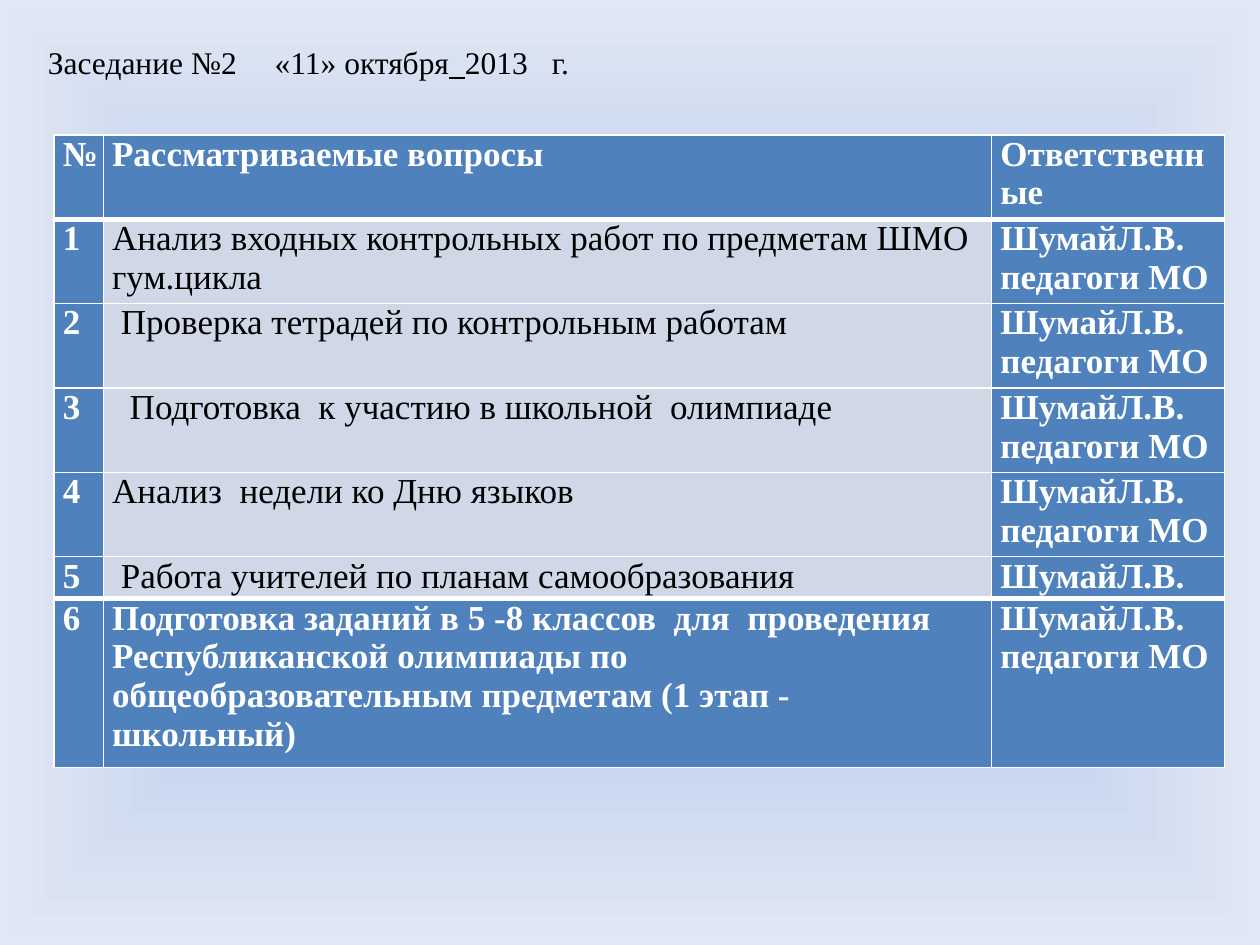
from lxml.etree import SubElement as add_element
from pptx import Presentation
from pptx.dml.color import RGBColor
from pptx.enum.text import MSO_ANCHOR as Anchor
from pptx.enum.text import MSO_AUTO_SIZE as AutoSize
from pptx.enum.text import PP_ALIGN as Align
from pptx.oxml.ns import qn
from pptx.util import Inches, Pt

FONT = "Times New Roman"
WHITE, BLACK, BLUE, PALE = "FFFFFF", "000000", "4F81BD", "D0D8E8"
BACKGROUND_STOPS = [(0, "CCC1DA"), (50, "C2D1ED"), (100, "E1E8F5")]

COLUMN_WIDTHS = [0.39, 7.05, 1.85]
ROW_HEIGHTS = [0.67] * 5 + [0.33, 1.34]
HEADERS = ["№", "Рассматриваемые вопросы", "Ответственные"]
LEADER = "ШумайЛ.В."
LEADER_AND_TEACHERS = "ШумайЛ.В.\nпедагоги МО"
# Question, first-line indent in inches, people responsible
AGENDA = [
    ("Анализ входных контрольных работ по предметам ШМО гум.цикла", 0, LEADER_AND_TEACHERS),
    ("Проверка тетрадей по контрольным работам", 0.07, LEADER_AND_TEACHERS),
    ("Подготовка  к участию в школьной  олимпиаде", 0.14, LEADER_AND_TEACHERS),
    ("Анализ  недели ко Дню языков", 0, LEADER_AND_TEACHERS),
    ("Работа учителей по планам самообразования", 0.07, LEADER),
    ("Подготовка заданий в 5 -8 классов  для  проведения Республиканской олимпиады "
     "по общеобразовательным предметам (1 этап - школьный)", 0, LEADER_AND_TEACHERS),
]


def color(value):
    return RGBColor.from_string(value)


def add_run(paragraph, text, size=20, text_color=BLACK, bold=False, underline=False):
    run = paragraph.add_run()
    run.text = text
    font = run.font
    font.name, font.size, font.bold, font.underline = FONT, Pt(size), bold, underline
    font.color.rgb = color(text_color)


def add_color(parent, value):
    add_element(parent, qn("a:srgbClr"), val=value)


def set_background(slide):
    slide.background.fill.gradient()
    gradient = slide.element.find(".//" + qn("a:gradFill"))
    gradient.clear()
    stops = add_element(gradient, qn("a:gsLst"))
    for percent, value in BACKGROUND_STOPS:
        add_color(add_element(stops, qn("a:gs"), pos=str(percent * 1000)), value)
    shape_fill = add_element(gradient, qn("a:path"), attrib={"path": "shape"})
    add_element(shape_fill, qn("a:fillToRect"), attrib={side: "50000" for side in "ltrb"})


def set_margins(item, horizontal, vertical):
    item.margin_left = item.margin_right = Inches(horizontal)
    item.margin_top = item.margin_bottom = Inches(vertical)


def add_title(slide):
    title = slide.shapes.title
    title.left, title.top = Inches(0.28), Inches(0.29)
    title.width, title.height = Inches(8.98), Inches(0.4)
    frame = title.text_frame
    frame.word_wrap = True
    frame.auto_size = AutoSize.SHAPE_TO_FIT_TEXT
    frame.vertical_anchor = Anchor.TOP
    set_margins(frame, 0.1, 0.05)
    paragraph = frame.paragraphs[0]
    paragraph.alignment = Align.LEFT
    # Tab stops for the date and the closing abbreviation
    tabs = add_element(paragraph._p.get_or_add_pPr(), qn("a:tabLst"))
    for position in (1.8, 4):
        add_element(tabs, qn("a:tab"), pos=str(Inches(position)), algn="l")
    add_run(paragraph, "Заседание №2\t«11» октября", size=18)
    add_run(paragraph, "  ", size=18, underline=True)
    add_run(paragraph, "2013\tг.", size=18)


def set_borders(cell, top=1, bottom=1):
    properties = cell._tc.get_or_add_tcPr()
    for side, width in (("L", 1), ("R", 1), ("T", top), ("B", bottom)):
        line = add_element(properties, qn("a:ln" + side), w=str(Pt(width)))
        add_color(add_element(line, qn("a:solidFill")), WHITE)


def fill_cell(cell, text, fill=BLUE, indent=0, top=1, bottom=1, **text_format):
    set_borders(cell, top, bottom)
    cell.fill.solid()
    cell.fill.fore_color.rgb = color(fill)
    set_margins(cell, 0.07, 0)
    frame = cell.text_frame
    for index, line in enumerate(text.split("\n")):
        paragraph = frame.add_paragraph() if index else frame.paragraphs[0]
        if indent:
            paragraph._p.get_or_add_pPr().set("indent", str(Inches(indent)))
        add_run(paragraph, line, **text_format)


def add_agenda(slide):
    table = slide.shapes.add_table(
        len(ROW_HEIGHTS), len(COLUMN_WIDTHS), Inches(0.43), Inches(1.07),
        Inches(sum(COLUMN_WIDTHS)), Inches(sum(ROW_HEIGHTS))).table
    for column, width in zip(table.columns, COLUMN_WIDTHS):
        column.width = Inches(width)
    for row, height in zip(table.rows, ROW_HEIGHTS):
        row.height = Inches(height)

    accent = {"text_color": WHITE, "bold": True}
    for column, header in enumerate(HEADERS):
        fill_cell(table.cell(0, column), header, bottom=3, **accent)

    last = len(AGENDA)
    for number, (question, indent, people) in enumerate(AGENDA, start=1):
        # Thick rules lie under the header and above the last row
        borders = {"top": 3 if number in (1, last) else 1,
                   "bottom": 3 if number == last - 1 else 1}
        question_format = accent if number == last else {"fill": PALE}
        fill_cell(table.cell(number, 0), str(number), **borders, **accent)
        fill_cell(table.cell(number, 1), question, indent=indent, **borders, **question_format)
        fill_cell(table.cell(number, 2), people, **borders, **accent)


def main():
    presentation = Presentation()
    presentation.slide_width, presentation.slide_height = Inches(10), Inches(7.5)
    slide = presentation.slides.add_slide(presentation.slide_layouts[5])
    set_background(slide)
    add_title(slide)
    add_agenda(slide)
    presentation.save("out.pptx")


if __name__ == "__main__":
    main()
